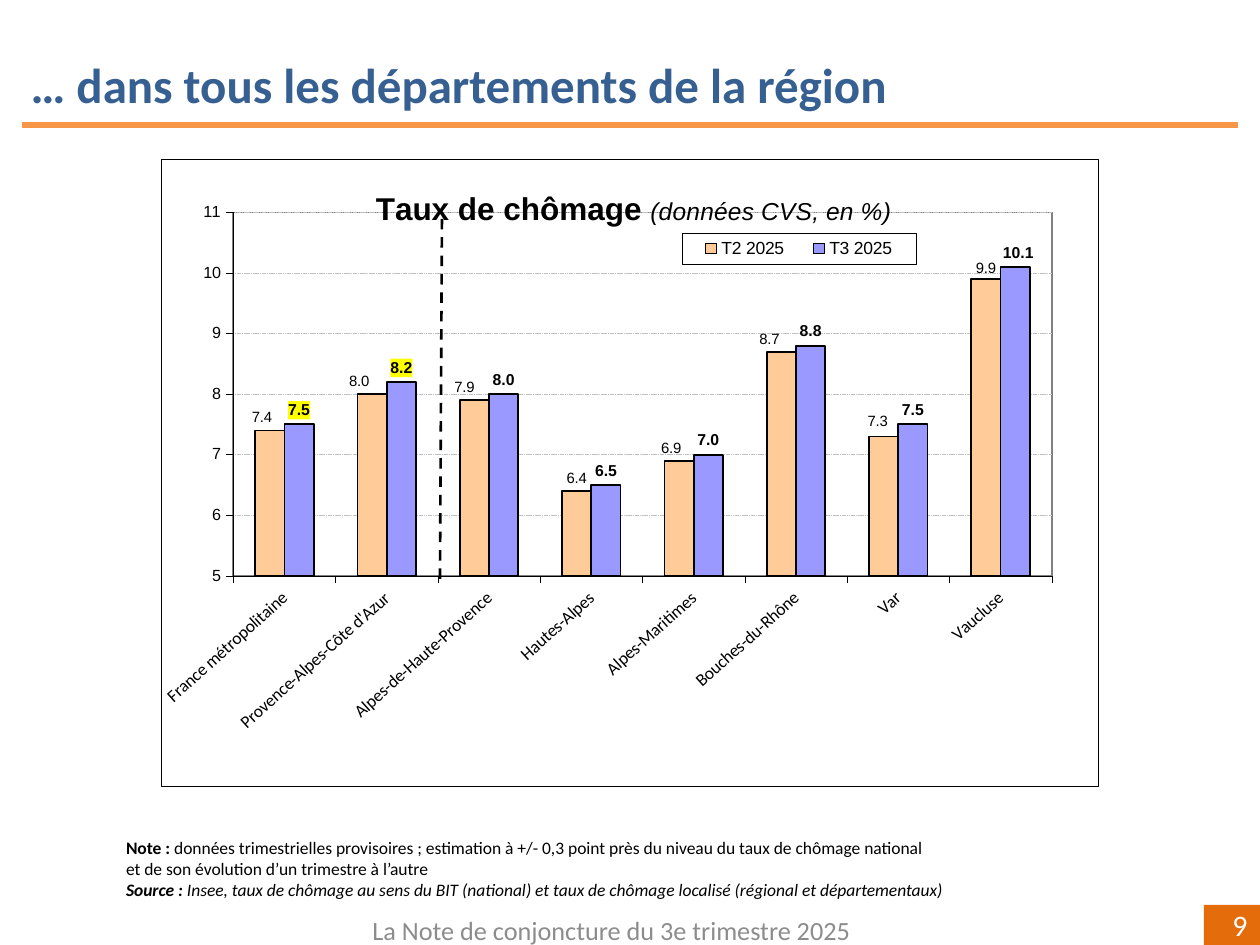
from pptx import Presentation
from pptx.chart.data import CategoryChartData
from pptx.dml.color import RGBColor
from pptx.enum.chart import XL_CHART_TYPE, XL_LABEL_POSITION, XL_LEGEND_POSITION, XL_TICK_MARK
from pptx.enum.dml import MSO_LINE
from pptx.enum.shapes import MSO_CONNECTOR, MSO_SHAPE
from pptx.enum.text import MSO_ANCHOR, MSO_AUTO_SIZE, PP_ALIGN
from pptx.oxml import parse_xml
from pptx.oxml.ns import nsdecls, qn
from pptx.util import Inches, Pt

SCALE = Inches(1) / 126
TITLE_ONLY = 5
COLUMNS = XL_CHART_TYPE.COLUMN_CLUSTERED
OUTSIDE, NO_TICK, TICK_OUT = XL_LABEL_POSITION.OUTSIDE_END, XL_TICK_MARK.NONE, XL_TICK_MARK.OUTSIDE
LEFT, CENTER, RIGHT = PP_ALIGN.LEFT, PP_ALIGN.CENTER, PP_ALIGN.RIGHT
TOP, MIDDLE = MSO_ANCHOR.TOP, MSO_ANCHOR.MIDDLE

BLACK = RGBColor(0, 0, 0)
WHITE = RGBColor(0xFF, 0xFF, 0xFF)
BLUE = RGBColor(0x37, 0x60, 0x92)
ORANGE = RGBColor(0xF7, 0x96, 0x46)
DARK_ORANGE = RGBColor(0xE4, 0x6C, 0x0A)
GRAY = RGBColor(0x8C, 0x8C, 0x8C)
GRID_GRAY = RGBColor(0xC0, 0xC0, 0xC0)
FRAME_GRAY = RGBColor(0x80, 0x80, 0x80)
PEACH = RGBColor(0xFF, 0xCC, 0x99)
LAVENDER = RGBColor(0x99, 0x99, 0xFF)
YELLOW = RGBColor(0xFF, 0xFF, 0)

DEPARTMENTS = ["France métropolitaine", "Provence-Alpes-Côte d'Azur", "Alpes-de-Haute-Provence",
               "Hautes-Alpes", "Alpes-Maritimes", "Bouches-du-Rhône", "Var", "Vaucluse"]
RATES = {"T2 2025": [7.4, 8.0, 7.9, 6.4, 6.9, 8.7, 7.3, 9.9],
         "T3 2025": [7.5, 8.2, 8.0, 6.5, 7.0, 8.8, 7.5, 10.1]}
# Label shifts in px, by category
T2_SHIFTS = {0: (-8, 0), 1: (-13, 0), 2: (-10, 0), 4: (-8, 0), 5: (-12, 0), 6: (-6, -2), 7: (0, 2)}
T3_SHIFTS = {7: (3, 0)}


def px(length):
    return round(length * SCALE)


def layout_xml(inner=False, edge=True, **parts):
    """Manual chart layout; parts are fractions of the chart."""
    target = '<c:layoutTarget val="inner"/>' if inner else ""
    modes = '<c:xMode val="edge"/><c:yMode val="edge"/>' if edge else ""
    values = "".join(f'<c:{name} val="{value:.4f}"/>' for name, value in parts.items())
    return parse_xml(f'<c:layout {nsdecls("c")}><c:manualLayout>{target}{modes}{values}'
                     '</c:manualLayout></c:layout>')


def area_xml(fill, line=None, width=0.25):
    outline = (f'<a:ln w="{Pt(width)}"><a:solidFill><a:srgbClr val="{line}"/></a:solidFill></a:ln>'
               if line is not None else "")
    return parse_xml(f'<c:spPr {nsdecls("c", "a")}><a:solidFill><a:srgbClr val="{fill}"/>'
                     f'</a:solidFill>{outline}</c:spPr>')


def replace_layout(parent, index, layout):
    for old in parent.findall(qn("c:layout")):
        parent.remove(old)
    parent.insert(index, layout)


class SlideBuilder:
    def __init__(self, deck):
        self.page = deck.slides.add_slide(deck.slide_layouts[TITLE_ONLY])
        self.shapes = self.page.shapes

    def style(self, font, size, color=BLACK, bold=False, italic=False, name="Calibri"):
        font.name, font.size, font.bold, font.italic = name, Pt(size), bold, italic
        font.color.rgb = color

    def set_text(self, box, text, size, color, align, anchor, bold=False):
        frame = box.text_frame
        frame.word_wrap, frame.auto_size = True, MSO_AUTO_SIZE.NONE
        frame.vertical_anchor = anchor
        para = frame.paragraphs[0]
        para.text, para.alignment = text, align
        self.style(para.font, size, color, bold)

    def title(self, text, left, top, width, height):
        box = self.shapes.title
        box.left, box.top, box.width, box.height = map(px, (left, top, width, height))
        self.set_text(box, text, 28, BLUE, LEFT, TOP, bold=True)

    def text(self, text, left, top, width, height, size, color):
        box = self.shapes.add_textbox(*map(px, (left, top, width, height)))
        self.set_text(box, text, size, color, CENTER, MIDDLE)

    def badge(self, text, left, top, width, height):
        box = self.shapes.add_shape(MSO_SHAPE.RECTANGLE, *map(px, (left, top, width, height)))
        box.shadow.inherit = False
        box.fill.solid()
        box.fill.fore_color.rgb = DARK_ORANGE
        box.line.fill.background()
        self.set_text(box, text, 17, WHITE, RIGHT, MIDDLE)

    def notes(self, lines, left, top, width, height):
        frame = self.shapes.add_textbox(*map(px, (left, top, width, height))).text_frame
        frame.word_wrap = True
        frame.margin_left, frame.margin_top = px(3), px(4)
        frame.margin_right = frame.margin_bottom = 0
        for index, (lead, body, italic) in enumerate(lines):
            para = frame.add_paragraph() if index else frame.paragraphs[0]
            self.style(para.font, 10, italic=italic)
            if lead:
                span = para.add_run()
                span.text, span.font.bold = lead, True
            para.add_run().text = body

    def line(self, x1, y1, x2, y2, color, width, dash=None):
        line = self.shapes.add_connector(MSO_CONNECTOR.STRAIGHT, *map(px, (x1, y1, x2, y2)))
        line.line.color.rgb, line.line.width = color, Pt(width)
        if dash:
            line.line.dash_style = dash
        line._element.spPr.append(parse_xml(f'<a:effectLst {nsdecls("a")}/>'))

    def column_chart(self, title_spans, left, top, width, height):
        data = CategoryChartData(number_format="0.0")
        data.categories = DEPARTMENTS
        for name, values in RATES.items():
            data.add_series(name, values)
        chart = self.shapes.add_chart(COLUMNS, *map(px, (left, top, width, height)), data).chart
        self.style(chart.font, 8.5, name="Arial")
        chart_xml = chart._chartSpace.find(qn("c:chart"))
        chart_xml.addnext(area_xml(WHITE, BLACK))
        plot_area = chart_xml.find(qn("c:plotArea"))
        replace_layout(plot_area, 0, layout_xml(True, x=0.077, y=0.085, w=0.874, h=0.58))
        plot_area.append(area_xml(WHITE, FRAME_GRAY, 1))

        # Title over the plot
        para = chart.chart_title.text_frame.paragraphs[0]
        for text, size, bold in title_spans:
            span = para.add_run()
            span.text = text
            self.style(span.font, size, bold=bold, italic=not bold, name="Arial")
        heading = chart.chart_title._element
        replace_layout(heading, 1, layout_xml(x=0.225, y=0.041))
        for overlay in heading.findall(qn("c:overlay")):
            overlay.set("val", "1")

        # Legend
        chart.has_legend = True
        legend = chart.legend
        legend.position, legend.include_in_layout = XL_LEGEND_POSITION.RIGHT, False
        self.style(legend.font, 10, name="Arial")
        replace_layout(legend._element, 1, layout_xml(x=0.556, y=0.118, w=0.25, h=0.05))
        legend._element.find(qn("c:overlay")).addnext(area_xml(WHITE, BLACK))

        # Axes
        for axis, size, font in ((chart.category_axis, 10, "Calibri"), (chart.value_axis, 9.2, "Arial")):
            axis.major_tick_mark, axis.minor_tick_mark = TICK_OUT, NO_TICK
            axis.format.line.color.rgb, axis.format.line.width = BLACK, Pt(0.25)
            self.style(axis.tick_labels.font, size, name=font)
        body = chart.category_axis._element.find(qn("c:txPr")).find(qn("a:bodyPr"))
        body.set("rot", str(-42 * 60000))
        rates = chart.value_axis
        rates.minimum_scale, rates.maximum_scale, rates.major_unit = 5, 11, 1
        rates.tick_labels.number_format, rates.tick_labels.number_format_is_linked = "0", False
        grid = rates.major_gridlines.format.line
        grid.color.rgb, grid.width, grid.dash_style = GRID_GRAY, Pt(0.25), MSO_LINE.SQUARE_DOT

        # Columns and their labels
        plot = chart.plots[0]
        plot.gap_width, plot.overlap, plot.vary_by_categories = 150, 0, False
        looks = ((PEACH, 8.5, False, T2_SHIFTS, ()), (LAVENDER, 9, True, T3_SHIFTS, (0, 1)))
        for series, (color, size, bold, shifts, marked) in zip(plot.series, looks):
            series.invert_if_negative = False
            series.format.fill.solid()
            series.format.fill.fore_color.rgb = color
            series.format.line.color.rgb, series.format.line.width = BLACK, Pt(1)
            labels = series.data_labels
            labels.show_value, labels.position = True, OUTSIDE
            labels.number_format, labels.number_format_is_linked = "0.0", False
            self.style(labels.font, size, bold=bold, name="Arial")
            for index in sorted({*shifts, *marked}):
                label = series.points[index].data_label
                label.position = OUTSIDE
                self.style(label.font, size, bold=bold, name="Arial")
                item = labels._element.xpath(f"c:dLbl[c:idx/@val='{index}']")[0]
                dx, dy = shifts.get(index, (0, 0))
                replace_layout(item, 1, layout_xml(edge=False, x=dx / width, y=dy / height))
                for old in item.findall(qn("c:spPr")):
                    item.remove(old)
                item.insert(2, parse_xml(f'<c:numFmt {nsdecls("c")} formatCode="0.0" sourceLinked="0"/>'))
                if index in marked:
                    item.insert(3, area_xml(YELLOW))


def main():
    deck = Presentation()
    deck.slide_width, deck.slide_height = Inches(10), Inches(7.5)
    slide = SlideBuilder(deck)

    # Heading
    slide.title("… dans tous les départements de la région", 18, 48, 1225, 72)
    slide.line(22, 125, 1238, 125, ORANGE, 3)

    # Unemployment chart, region set apart from its departments
    slide.column_chart([("Taux de chômage ", 18, True), ("(données CVS, en %)", 14, False)],
                       161, 159, 937, 627)
    slide.line(440, 579, 442, 214, BLACK, 1.5, MSO_LINE.DASH)

    # Notes and footer
    slide.notes([
        ("Note : ", "données trimestrielles provisoires ; estimation à +/- 0,3 point près du niveau "
         "du taux de chômage national", False),
        ("", "et de son évolution d’un trimestre à l’autre", False),
        ("Source : ", "Insee, taux de chômage au sens du BIT (national) et taux de chômage localisé "
         "(régional et départementaux)", True)], 123, 833, 861, 67)
    slide.text("La Note de conjoncture du 3e trimestre 2025", 304, 905, 615, 50, 15, GRAY)
    slide.badge("9", 1204, 905, 56, 40)
    deck.save("out.pptx")


if __name__ == "__main__":
    main()
